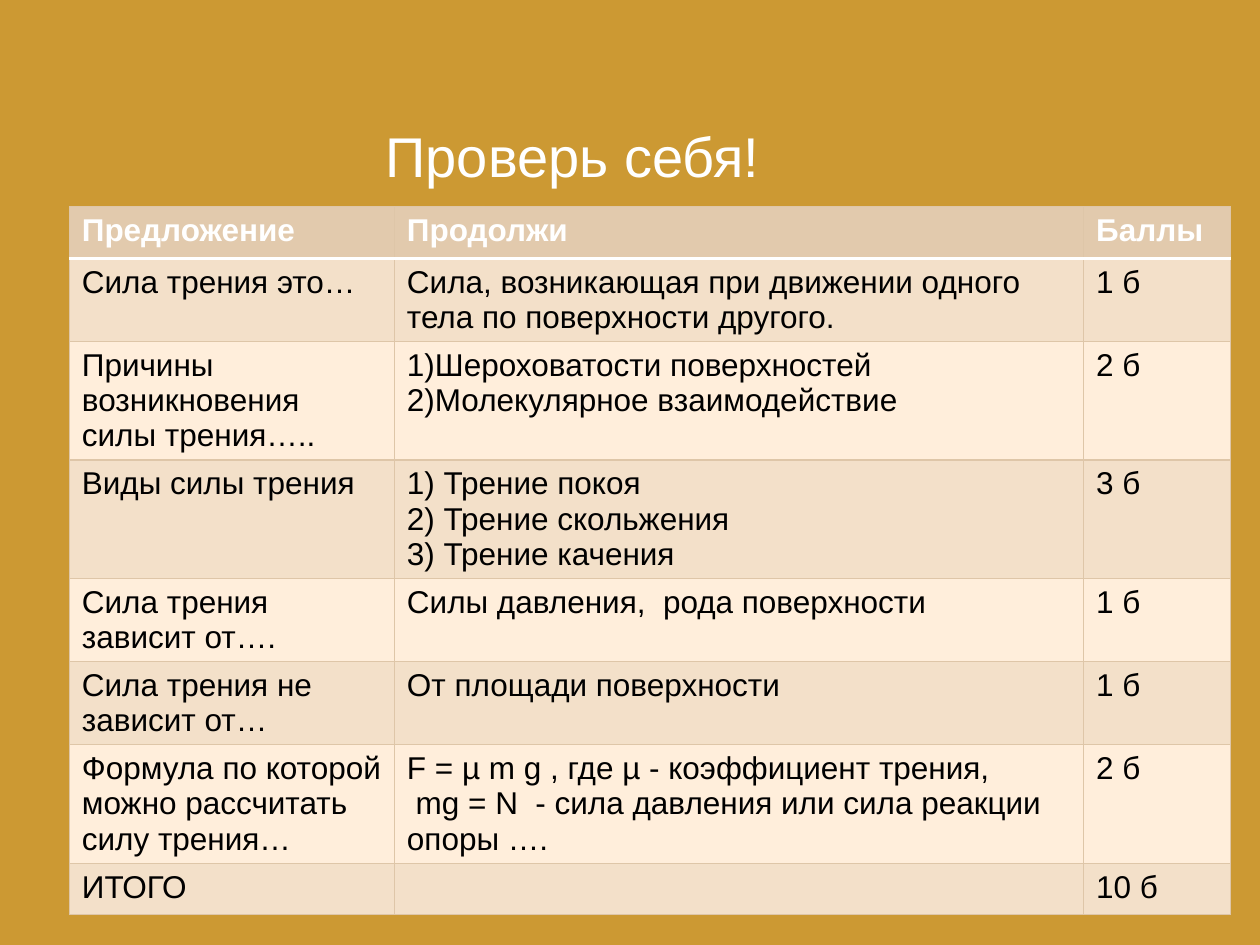
from lxml import etree
from pptx import Presentation
from pptx.dml.color import RGBColor
from pptx.enum.text import MSO_ANCHOR, PP_ALIGN
from pptx.oxml.ns import qn
from pptx.util import Inches, Pt

LEFT = PP_ALIGN.LEFT
BOTTOM = MSO_ANCHOR.BOTTOM

OCHRE = RGBColor(0xCC, 0x99, 0x33)
WHITE = RGBColor(0xFF, 0xFF, 0xFF)
BLACK = RGBColor(0x00, 0x00, 0x00)
HEADER_TAN = RGBColor(0xE2, 0xCA, 0xAD)
DARK_BAND = RGBColor(0xF3, 0xE0, 0xC9)
LIGHT_BAND = RGBColor(0xFF, 0xEE, 0xDB)
GRID_TAN = RGBColor(0xDE, 0xC6, 0xA8)

FONT = "Arial"
COLUMN_WIDTHS = [2.58, 5.47, 1.17]
ROW_HEIGHT = 0.41
ROWS = [
    (["Предложение"], ["Продолжи"], ["Баллы"]),
    (["Сила трения это…"],
     ["Сила, возникающая при движении одного тела по поверхности другого."],
     ["1 б"]),
    (["Причины возникновения силы трения….."],
     ["1)Шероховатости поверхностей", "2)Молекулярное взаимодействие"],
     ["2 б"]),
    (["Виды силы трения"],
     ["1) Трение покоя", "2) Трение скольжения", "3) Трение качения"],
     ["3 б"]),
    (["Сила трения зависит от…."], ["Силы давления,  рода поверхности"], ["1 б"]),
    (["Сила трения не зависит от…"], ["От площади поверхности"], ["1 б"]),
    (["Формула по которой можно рассчитать силу трения…"],
     ["F = µ m g , где µ - коэффициент трения,",
      " mg = N  - сила давления или сила реакции опоры …."],
     ["2 б"]),
    (["ИТОГО"], [], ["10 б"]),
]


def add_text(para, text, size, color, bold=False):
    span = para.add_run()
    span.text = text
    span.font.name = FONT
    span.font.size = Pt(size)
    span.font.bold = bold
    span.font.color.rgb = color


def add_border(cell, side, color, width):
    properties = cell._tc.get_or_add_tcPr()
    line = etree.SubElement(properties, qn(f"a:ln{side}"), w=str(Pt(width)))
    fill = etree.SubElement(line, qn("a:solidFill"))
    etree.SubElement(fill, qn("a:srgbClr"), val=str(color))


deck = Presentation()
deck.slide_width = Inches(10)
deck.slide_height = Inches(7.5)
page = deck.slides.add_slide(deck.slide_layouts[5])
page.background.fill.solid()
page.background.fill.fore_color.rgb = OCHRE

title = page.shapes.title
title.left, title.top = Inches(2.96), Inches(0.3)
title.width, title.height = Inches(6.91), Inches(1.25)
title.text_frame.vertical_anchor = BOTTOM
title_para = title.text_frame.paragraphs[0]
title_para.alignment = LEFT
add_text(title_para, "Проверь себя!", 32, WHITE)

table = page.shapes.add_table(
    len(ROWS), len(COLUMN_WIDTHS), Inches(0.55), Inches(1.64),
    Inches(sum(COLUMN_WIDTHS)), Inches(ROW_HEIGHT * len(ROWS))).table
for column, width in zip(table.columns, COLUMN_WIDTHS):
    column.width = Inches(width)

for row_index, row in enumerate(ROWS):
    table.rows[row_index].height = Inches(ROW_HEIGHT)
    is_header = row_index == 0
    if is_header:
        row_fill = HEADER_TAN
    else:
        row_fill = DARK_BAND if row_index % 2 else LIGHT_BAND
    for column_index, lines in enumerate(row):
        cell = table.cell(row_index, column_index)
        for side in "LRTB":
            under_header = (row_index, side) in [(0, "B"), (1, "T")]
            add_border(cell, side, WHITE if under_header else GRID_TAN,
                       2 if under_header else 0.75)
        cell.fill.solid()
        cell.fill.fore_color.rgb = row_fill
        frame = cell.text_frame
        for line_index, text in enumerate(lines):
            para = frame.add_paragraph() if line_index else frame.paragraphs[0]
            add_text(para, text, 18, WHITE if is_header else BLACK, is_header)

deck.save("out.pptx")
